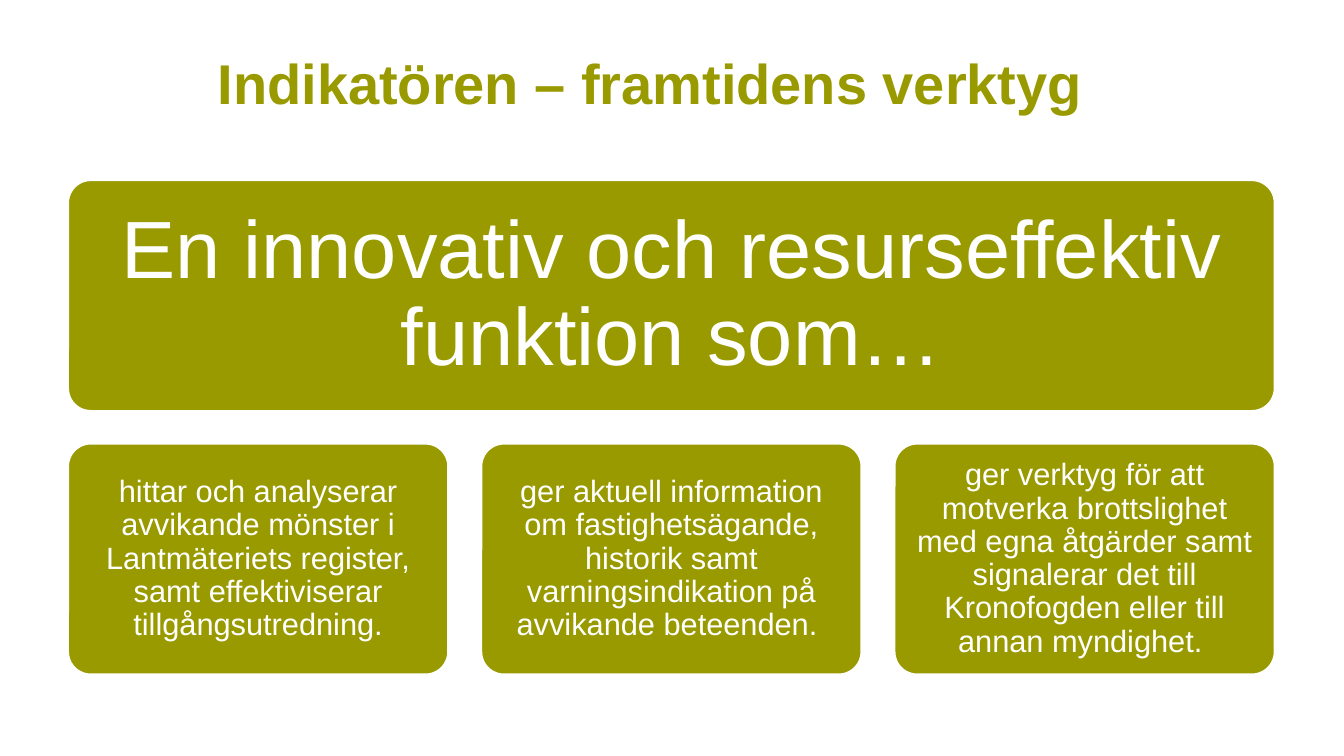
import pptx
import pptx.util
import pptx.dml.color
import pptx.enum.shapes
import pptx.enum.text

Pt = pptx.util.Pt
OLIVE = pptx.dml.color.RGBColor(0x99, 0x99, 0x00)
WHITE = pptx.dml.color.RGBColor(0xFF, 0xFF, 0xFF)

HEADLINE = "Indikatören – framtidens verktyg\t"
PROMISE = "En innovativ och resurseffektiv funktion som…"
BENEFITS = [
    "hittar och analyserar avvikande mönster i Lantmäteriets register, samt effektiviserar tillgångsutredning.",
    "ger aktuell information om fastighetsägande, historik samt varningsindikation på avvikande beteenden. ",
    "ger verktyg för att motverka brottslighet med egna åtgärder samt signalerar det till Kronofogden eller till annan myndighet. ",
]

LEFT, WIDTH = 48.3, 862.5
HEADLINE_TOP, HEADLINE_HEIGHT = 21.6, 73.4
PROMISE_TOP, BENEFITS_TOP, PANEL_HEIGHT = 128.4, 316.6, 165.5
GAP = 23
BENEFIT_WIDTH = (WIDTH - GAP * (len(BENEFITS) - 1)) / len(BENEFITS)


def write(frame, wording, size, color, bold=False):
    frame.word_wrap = True
    frame.vertical_anchor = pptx.enum.text.MSO_ANCHOR.MIDDLE
    paragraph = frame.paragraphs[0]
    paragraph.alignment = pptx.enum.text.PP_ALIGN.CENTER
    run = paragraph.add_run()
    run.text = wording
    run.font.name = "Arial"
    run.font.size = Pt(size)
    run.font.bold = bold
    run.font.color.rgb = color
    return paragraph


def add_panel(slide, wording, left, top, width, size, inset):
    panel = slide.shapes.add_shape(
        pptx.enum.shapes.MSO_SHAPE.ROUNDED_RECTANGLE,
        Pt(left), Pt(top), Pt(width), Pt(PANEL_HEIGHT))
    panel.adjustments[0] = 0.1
    panel.shadow.inherit = False
    panel.fill.solid()
    panel.fill.fore_color.rgb = OLIVE
    panel.line.color.rgb = WHITE
    panel.line.width = Pt(2)
    frame = panel.text_frame
    frame.margin_left = frame.margin_right = Pt(inset)
    frame.margin_top = frame.margin_bottom = Pt(inset)
    write(frame, wording, size, WHITE).line_spacing = 0.9


def main():
    deck = pptx.Presentation()
    deck.slide_width, deck.slide_height = Pt(960), Pt(540)
    slide = deck.slides.add_slide(deck.slide_layouts[6])

    add_panel(slide, PROMISE, LEFT, PROMISE_TOP, WIDTH, 58, 17.4)
    for column, benefit in enumerate(BENEFITS):
        left = LEFT + column * (BENEFIT_WIDTH + GAP)
        add_panel(slide, benefit, left, BENEFITS_TOP, BENEFIT_WIDTH, 22, 6.6)

    headline = slide.shapes.add_textbox(
        Pt(LEFT), Pt(HEADLINE_TOP), Pt(WIDTH), Pt(HEADLINE_HEIGHT))
    write(headline.text_frame, HEADLINE, 40, OLIVE, bold=True)

    deck.save("out.pptx")


if __name__ == "__main__":
    main()
